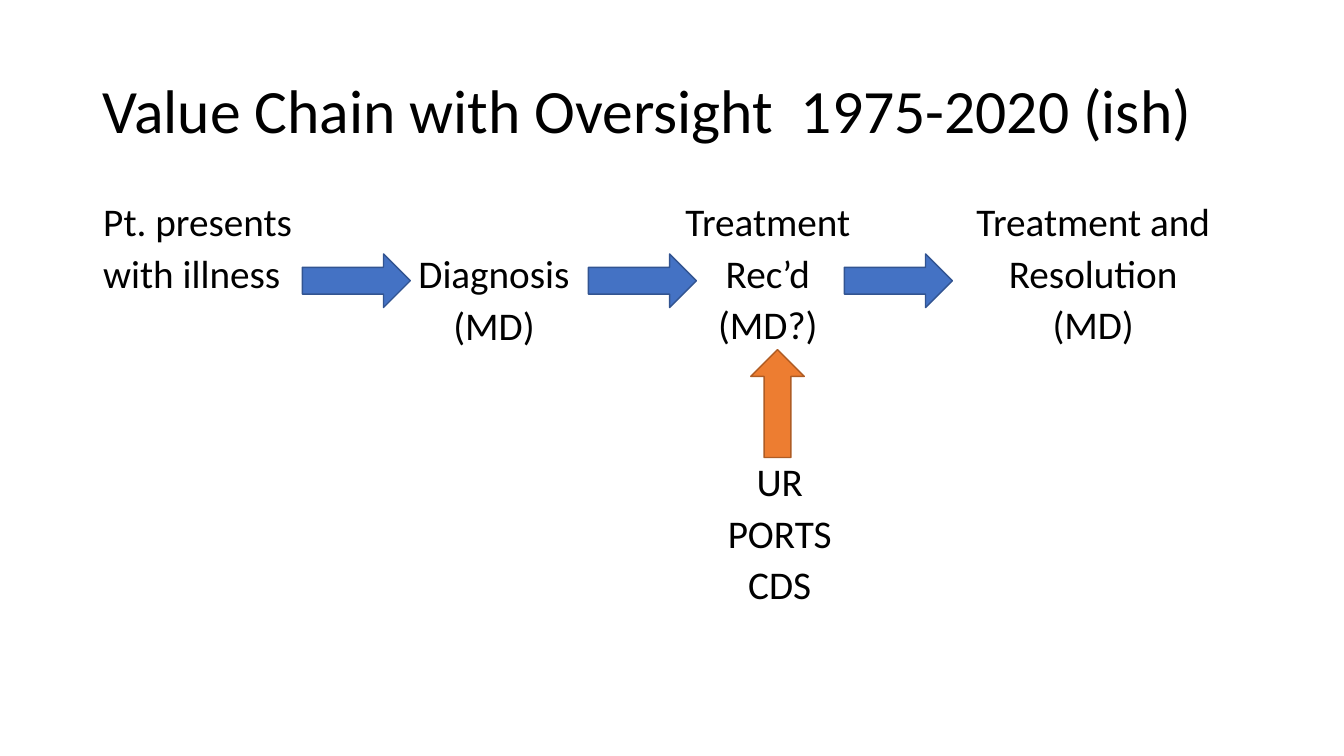
from pptx import Presentation
from pptx.dml.color import RGBColor
from pptx.enum import shapes, text
from pptx.util import Cm, Pt

FIRST_ROW, ROW_PITCH = 5.08, 1.31
ARROW_LENGTH, ARROW_WIDTH = 2.72, 1.35


def colour(hex_string):
    return RGBColor.from_string(hex_string)


class ValueChainSlide:
    """Holds the text style and the slide being built."""

    font_name = "Calibri"
    text_colour = "000000"

    def __init__(self, presentation):
        self.slide = presentation.slides.add_slide(presentation.slide_layouts[5])

    def style_text(self, frame, size, alignment, line_spacing, space_before=0):
        frame.word_wrap = True
        frame.auto_size = text.MSO_AUTO_SIZE.NONE
        for paragraph in frame.paragraphs:
            paragraph.alignment = alignment
            paragraph.line_spacing = line_spacing
            paragraph.space_before = Pt(space_before)
            for run in paragraph.runs:
                run.font.name = self.font_name
                run.font.size = Pt(size)
                run.font.color.rgb = colour(self.text_colour)

    def title(self, wording):
        title = self.slide.shapes.title
        title.left, title.top = Cm(2.33), Cm(1.01)
        title.width, title.height = Cm(29.21), Cm(3.68)
        title.text_frame.text = wording
        title.text_frame.vertical_anchor = text.MSO_ANCHOR.MIDDLE
        self.style_text(title.text_frame, 44, text.PP_ALIGN.LEFT, 0.9)

    def stage(self, lines, row, centre, width, alignment=text.PP_ALIGN.CENTER):
        """Add a block of lines whose first line sits on the given text row."""
        box = self.slide.shapes.add_textbox(
            Cm(centre - width / 2), Cm(FIRST_ROW + row * ROW_PITCH),
            Cm(width), Cm(len(lines) * ROW_PITCH))
        frame = box.text_frame
        frame.margin_left = frame.margin_right = 0
        frame.text = "\n".join(lines)
        self.style_text(frame, 28, alignment, 0.8, 10)

    def arrow(self, preset, left, top, width, height, fill, line):
        arrow = self.slide.shapes.add_shape(
            preset, Cm(left), Cm(top), Cm(width), Cm(height))
        arrow.shadow.inherit = False
        arrow.fill.solid()
        arrow.fill.fore_color.rgb = colour(fill)
        arrow.line.color.rgb = colour(line)
        arrow.line.width = Pt(1)


def main():
    presentation = Presentation()
    presentation.slide_width, presentation.slide_height = Cm(33.87), Cm(19.05)
    chain = ValueChainSlide(presentation)

    chain.title("Value Chain with Oversight  1975-2020 (ish)")
    chain.stage(["Pt. presents", "with illness"], 0, 5.1, 5, text.PP_ALIGN.LEFT)
    chain.stage(["Diagnosis", "(MD)"], 1, 12.45, 4.1)
    chain.stage(["Treatment", "Rec’d", "(MD?)"], 0, 19.35, 4.4)
    chain.stage(["Treatment and", "Resolution", "(MD)"], 0, 27.55, 6.2)
    chain.stage(["UR", "PORTS", "CDS"], 5, 19.65, 4.4)

    for left in (7.62, 14.83, 21.28):
        chain.arrow(shapes.MSO_SHAPE.RIGHT_ARROW, left, 6.4,
                    ARROW_LENGTH, ARROW_WIDTH, "4472C4", "325491")
    chain.arrow(shapes.MSO_SHAPE.UP_ARROW, 18.92, 8.81,
                ARROW_WIDTH, ARROW_LENGTH, "ED7D31", "AF5C24")

    presentation.save("out.pptx")


if __name__ == "__main__":
    main()
